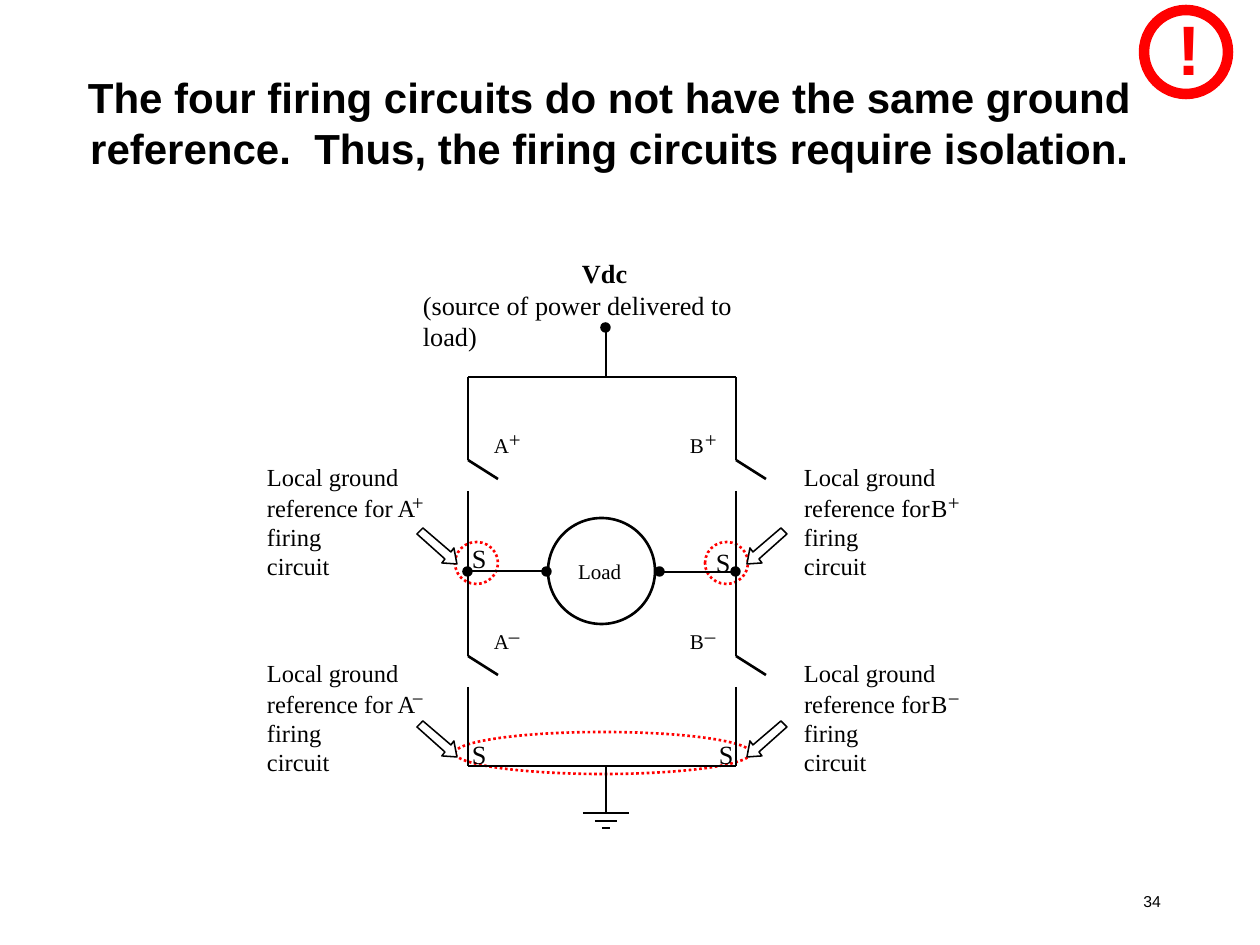
import pptx
import pptx.dml.color
import pptx.enum.dml
import pptx.enum.shapes
import pptx.enum.text
import pptx.oxml.ns
import pptx.util
import lxml.etree

PX = 914400 / 126
SERIF = "Times New Roman"
SANS = "Arial"
BLACK = "000000"
WHITE = "FFFFFF"
RED = "FF0000"
ROW_PITCH = 196
ARROW_OUTLINE = [(37, 20), (34, 24), (6, 0), (0, 6), (28, 31), (25, 35), (40, 36)]
ARROW_PITCH = 193
DOT = 9


def emu(px):
    return pptx.util.Emu(round(px * PX))


def color(hex_string):
    return pptx.dml.color.RGBColor.from_string(hex_string)


def apply_format(target, values):
    for name, value in values.items():
        setattr(target, name, value)


def write(frame, text, size, face=SERIF, ink=BLACK, bold=False, align="LEFT",
          inset=0, wrap=False, anchor="TOP"):
    apply_format(frame, {
        "text": text,
        "word_wrap": wrap,
        "auto_size": pptx.enum.text.MSO_AUTO_SIZE.NONE,
        "vertical_anchor": getattr(pptx.enum.text.MSO_ANCHOR, anchor),
        "margin_left": emu(2 * inset),
        "margin_right": emu(2 * inset),
        "margin_top": emu(inset),
        "margin_bottom": emu(inset),
    })
    paragraph = frame.paragraphs[0]
    apply_format(paragraph, {
        "alignment": getattr(pptx.enum.text.PP_ALIGN, align),
        "space_before": pptx.util.Pt(0),
    })
    apply_format(paragraph.font, {"name": face, "size": pptx.util.Pt(size), "bold": bold})
    paragraph.font.color.rgb = color(ink)


def add_text(slide, box, text, size, **style):
    label = slide.shapes.add_textbox(*map(emu, box))
    write(label.text_frame, text, size, **style)


def paint(shape, fill, ink, weight, dotted=False):
    shape.shadow.inherit = False
    if fill:
        shape.fill.solid()
        shape.fill.fore_color.rgb = color(fill)
    else:
        shape.fill.background()
    shape.line.color.rgb = color(ink)
    shape.line.width = pptx.util.Pt(weight)
    if dotted:
        shape.line.dash_style = pptx.enum.dml.MSO_LINE.ROUND_DOT


def add_ellipse(slide, box, fill=None, ink=BLACK, weight=1.5, dotted=False):
    oval = slide.shapes.add_shape(pptx.enum.shapes.MSO_SHAPE.OVAL, *map(emu, box))
    paint(oval, fill, ink, weight, dotted)


def add_dot(slide, x, y):
    add_ellipse(slide, (x, y, DOT, DOT), fill=BLACK, weight=0.88)


def add_wire(slide, *ends):
    wire = slide.shapes.add_connector(
        pptx.enum.shapes.MSO_CONNECTOR.STRAIGHT, *map(emu, ends))
    wire.line.color.rgb = color(BLACK)
    wire.line.width = pptx.util.Pt(1.5)
    lxml.etree.SubElement(wire._element.spPr, pptx.oxml.ns.qn("a:effectLst"))


def place_title(slide, box):
    title = slide.shapes.title
    apply_format(title, dict(zip(("left", "top", "width", "height"), map(emu, box))))
    write(title.text_frame,
          "The four firing circuits do not have the same ground reference.  "
          "Thus, the firing circuits require isolation.",
          24, face=SANS, bold=True, align="CENTER", inset=6, wrap=True)


def place_ground_zones(slide, box):
    left, top, width, height = box
    for x, y, zone_width in ((0, 0, 43), (width - 46, 0, 43),
                             (0, height - 42, width)):
        add_ellipse(slide, (left + x, top + y, zone_width, 42), ink=RED, dotted=True)


def place_leg(slide, box, letter, label_x, source_marks):
    left, top, width, height = box
    for row, sign in enumerate("+–"):
        y = top + row * ROW_PITCH
        add_wire(slide, left, y, left, y + 83)
        add_wire(slide, left, y + 83, left + width, y + 102)
        add_wire(slide, left, y + 114, left, min(y + ROW_PITCH, top + height))
        add_text(slide, (left + label_x, y + 56, 15, 25), letter, 12)
        add_text(slide, (left + label_x + 15, y + 50, 11, 25), sign, 12)
    for x, y in source_marks:
        add_text(slide, (left + x, top + y, 15, 32), "S", 15)
    add_dot(slide, left - 5, top + 190)


def place_supply(slide, box):
    left, top, width, height = box
    center = left + 183
    add_text(slide, (left + 159, top, 45, 32), "Vdc", 15, bold=True)
    add_text(slide, (left, top + 32, width, 64),
             "(source of power delivered to load)", 15, wrap=True)
    add_wire(slide, center, top + height, center, top + 73)
    add_dot(slide, center - 5, top + 66)


def place_load(slide, box):
    left, top, width, height = box
    middle = top + height // 2
    add_ellipse(slide, (left + 80, top, 107, height), fill=WHITE)
    add_text(slide, (left + 110, top + 41, 43, 25), "Load", 12)
    add_wire(slide, left, middle, left + 76, middle)
    add_wire(slide, left + 196, middle + 1, left + width, middle + 1)
    for x in (74, 187):
        add_dot(slide, left + x, middle - 4)


def place_earth(slide, box):
    left, top, width, height = box
    center = left + width // 2
    add_wire(slide, center, top, center, top + 47)
    for half_width, y in ((width // 2, 47), (11, 55), (4, height)):
        add_wire(slide, center - half_width, top + y, center + half_width, top + y)


def place_reference(slide, box, letter, sign, letter_x):
    left, top, width, height = box
    add_text(slide, (left, top, 137, 29), "Local ground", 14)
    if letter == "A":
        add_text(slide, (left, top + 31, width, 29), "reference for A", 14)
    else:
        add_text(slide, (left, top + 31, 132, 29), "reference for", 14)
        add_text(slide, (left + letter_x, top + 31, 16, 29), letter, 14)
    add_text(slide, (left + letter_x + 17, top + 28, 11, 25), sign, 12)
    add_text(slide, (left, top + 60, 88, height - 60), "firing circuit", 14, wrap=True)


def place_arrow(slide, box, mirrored):
    left, top, width, height = box
    points = [(width - x if mirrored else x, y) for x, y in ARROW_OUTLINE]
    builder = slide.shapes.build_freeform(*points[0], scale=PX)
    builder.add_line_segments(points[1:], close=True)
    paint(builder.convert_to_shape(emu(left), emu(top)), WHITE, BLACK, 0.88)


def place_warning(slide, box):
    left, top, width, height = box
    add_text(slide, (left + 22, top - 10, 49, 97), "!", 40,
             face=SANS, ink=RED, bold=True, inset=6)
    add_ellipse(slide, box, ink=RED, weight=6)


def place_circuit(slide, box):
    left, top, width, height = box
    right, bottom = left + width, top + height
    place_ground_zones(slide, (left - 13, top + 165, 296, 232))
    place_leg(slide, (left, top, 30, height), "A", 26, ((4, 165), (4, 361)))
    place_leg(slide, (right, top, 30, height), "B", -46, ((-20, 169), (-17, 361)))
    for y in (top, bottom):
        add_wire(slide, left, y, right, y)
    place_supply(slide, (left - 45, top - 120, 330, 120))
    place_load(slide, (left, top + 141, width, 106))
    place_earth(slide, (left + 115, bottom, 46, 62))
    for row, sign in enumerate("+−"):
        reference_y = top + 85 + row * ROW_PITCH
        arrow_y = top + 151 + row * ARROW_PITCH
        place_reference(slide, (left - 201, reference_y, 150, 118), "A", sign, 128)
        place_reference(slide, (right + 68, reference_y, 155, 118), "B", sign, 127)
        place_arrow(slide, (left - 51, arrow_y, 40, 36), False)
        place_arrow(slide, (right + 11, arrow_y, 40, 36), True)


def main():
    deck = pptx.Presentation()
    deck.slide_width, deck.slide_height = emu(1260), emu(945)
    slide = deck.slides.add_slide(deck.slide_layouts[5])
    place_title(slide, (53, 66, 1113, 113))
    place_circuit(slide, (468, 377, 268, 389))
    place_warning(slide, (1144, 10, 84, 84))
    add_text(slide, (890, 876, 283, 50), "34", 9, face=SANS, align="RIGHT",
             inset=6, wrap=True, anchor="MIDDLE")
    deck.save("out.pptx")


if __name__ == "__main__":
    main()
